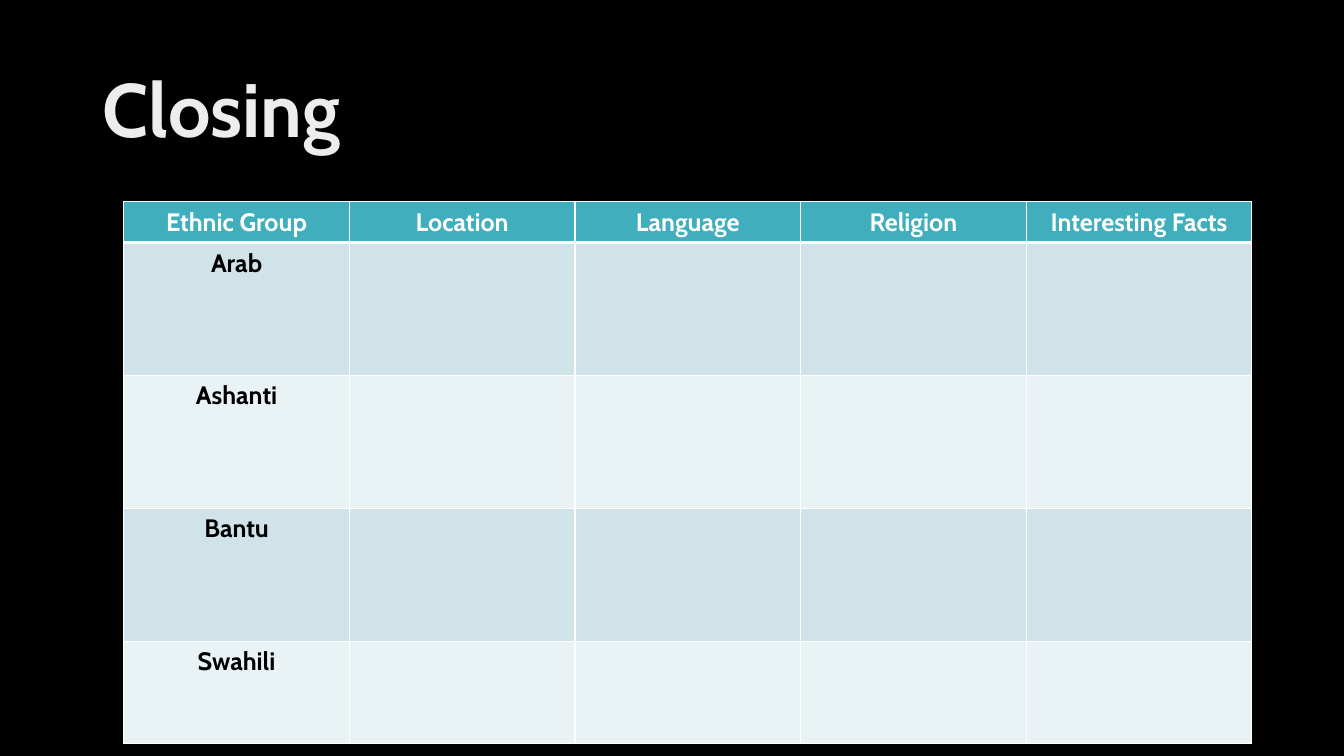
import pptx
import pptx.dml.color
import pptx.enum.text
import pptx.oxml
import pptx.oxml.ns
import pptx.util
from lxml import etree

Pt = pptx.util.Pt
ALIGN = pptx.enum.text.PP_ALIGN
ANCHOR = pptx.enum.text.MSO_ANCHOR

# Content
HEADING = "Closing"
COLUMNS = ["Ethnic Group", "Location", "Language", "Religion", "Interesting Facts"]
GROUPS = ["Arab", "Ashanti", "Bantu", "Swahili"]

# Style
FONT = "Cabin"
COLORS = {
    "background": "000000",
    "heading": "EDEDED",
    "header": "41AEBD",
    "header_text": "FFFFFF",
    "group_text": "000000",
    "odd_row": "CFE3E8",
    "even_row": "E9F2F4",
    "border": "FFFFFF",
}

# Layout in points
SLIDE_W, SLIDE_H = 960, 540
HEADING_BOX = (66.24, 28.8, 828, 104.4)
GRID_LEFT, GRID_TOP, COLUMN_W = 88.4, 144, 161.15
ROW_HEIGHTS = [29.3, 95, 95, 95, 73]
THIN, THICK = 1, 3


def rgb(name):
    return pptx.dml.color.RGBColor.from_string(COLORS[name])


def write(frame, text, size=18, color="group_text", align=ALIGN.CENTER, spacing=1.0):
    paragraph = frame.paragraphs[0]
    paragraph.text = text
    paragraph.alignment = align
    paragraph.line_spacing = spacing
    for font in [paragraph.font] + [run.font for run in paragraph.runs]:
        font.name, font.size, font.bold = FONT, Pt(size), True
        font.color.rgb = rgb(color)


def add_borders(cell, widths):
    properties = cell._tc.get_or_add_tcPr()
    for side, width in widths.items():
        line = etree.SubElement(properties, pptx.oxml.ns.qn(f"a:ln{side}"), w=str(Pt(width)))
        fill = etree.SubElement(line, pptx.oxml.ns.qn("a:solidFill"))
        etree.SubElement(fill, pptx.oxml.ns.qn("a:srgbClr"), val=COLORS["border"])


def main():
    deck = pptx.Presentation()
    deck.slide_width, deck.slide_height = Pt(SLIDE_W), Pt(SLIDE_H)
    slide = deck.slides.add_slide(deck.slide_layouts[5])
    slide.background.fill.solid()
    slide.background.fill.fore_color.rgb = rgb("background")

    # Heading
    heading = slide.shapes.title
    heading.left, heading.top, heading.width, heading.height = map(Pt, HEADING_BOX)
    heading.text_frame.vertical_anchor = ANCHOR.MIDDLE
    heading.text_frame.word_wrap = True
    write(heading.text_frame, HEADING, size=54, color="heading", align=ALIGN.LEFT, spacing=0.9)

    # Worksheet grid: one row per group, answers left blank
    rows = [COLUMNS] + [[group] + [""] * (len(COLUMNS) - 1) for group in GROUPS]
    grid = slide.shapes.add_table(
        len(rows), len(COLUMNS), Pt(GRID_LEFT), Pt(GRID_TOP),
        Pt(COLUMN_W * len(COLUMNS)), Pt(sum(ROW_HEIGHTS))).table
    for column in grid.columns:
        column.width = Pt(COLUMN_W)
    for r, (texts, height) in enumerate(zip(rows, ROW_HEIGHTS)):
        grid.rows[r].height = Pt(height)
        row_fill = "header" if r == 0 else "odd_row" if r % 2 else "even_row"
        for c, text in enumerate(texts):
            cell = grid.cell(r, c)
            add_borders(cell, {"L": THIN, "R": THIN,
                               "T": THICK if r == 1 else THIN,
                               "B": THICK if r == 0 else THIN})
            cell.fill.solid()
            cell.fill.fore_color.rgb = rgb(row_fill)
            write(cell.text_frame, text, color="group_text" if r else "header_text")

    deck.save("out.pptx")


if __name__ == "__main__":
    main()
